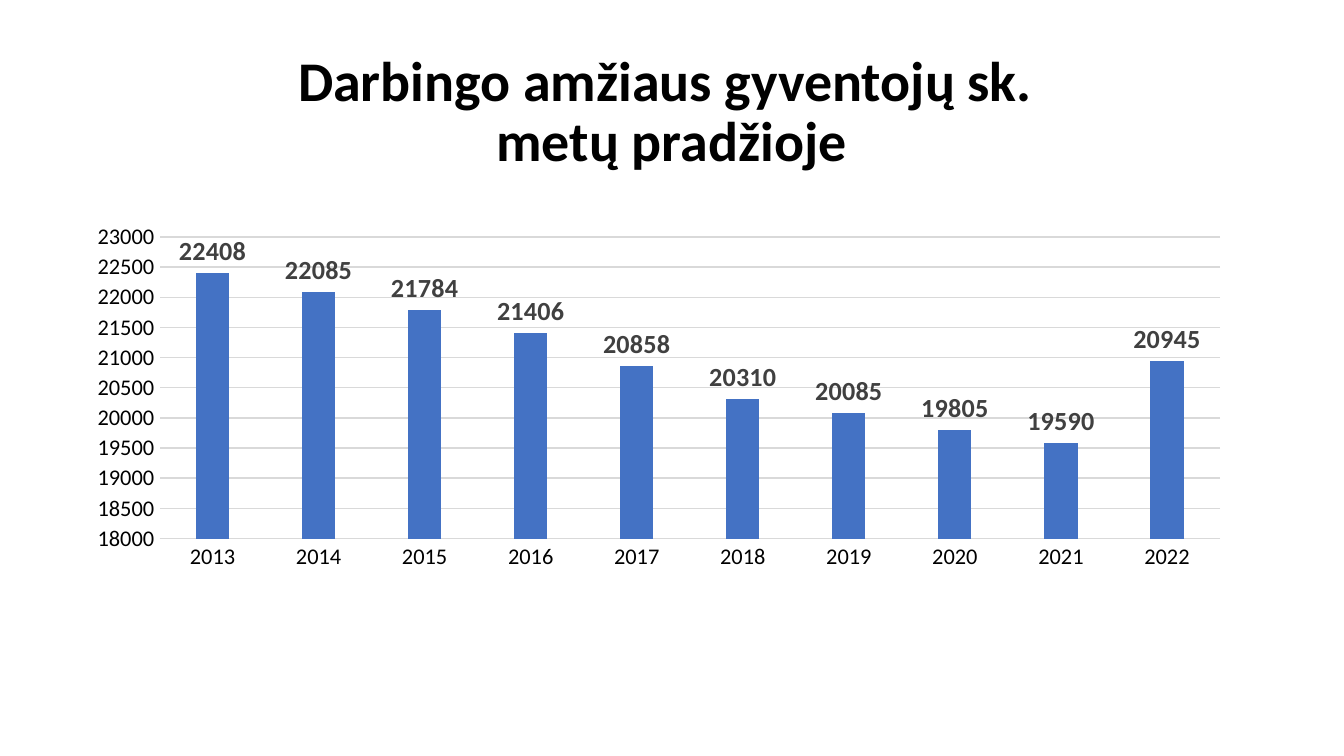
from dataclasses import dataclass
from typing import Any, Optional

import pptx
import pptx.chart.data
import pptx.dml.color
import pptx.enum.chart
import pptx.enum.text
import pptx.util
from pptx.util import Cm

COLORS = {
    "text": "000000",
    "label": "404040",
    "grid": "D9D9D9",
    "bar": "4472C4",
}
FONT = "Calibri"
TITLE_LINES = ("Darbingo amžiaus gyventojų sk. ", "metų pradžioje")
RESIDENTS = (22408, 22085, 21784, 21406, 20858, 20310, 20085, 19805, 19590, 20945)
FIRST_YEAR = 2013


@dataclass(frozen=True)
class TextStyle:
    size: float
    color: str = "text"
    bold: bool = False


@dataclass(frozen=True)
class AxisStyle:
    settings: dict[str, Any]
    line_color: Optional[str] = None


TITLE_STYLE = TextStyle(30, bold=True)
AXIS_TEXT = TextStyle(12)
LABEL_STYLE = TextStyle(14, "label", True)
YEAR_AXIS = AxisStyle({"has_major_gridlines": False}, "grid")
RESIDENT_AXIS = AxisStyle({
    "minimum_scale": 18000,
    "maximum_scale": 23000,
    "major_unit": 500,
    "has_major_gridlines": True,
})


def rgb(name: str) -> pptx.dml.color.RGBColor:
    return pptx.dml.color.RGBColor.from_string(COLORS[name])


def apply_settings(target: Any, settings: dict[str, Any]) -> None:
    for name, value in settings.items():
        setattr(target, name, value)


def style_font(font: Any, style: TextStyle) -> None:
    apply_settings(font, {
        "name": FONT,
        "size": pptx.util.Pt(style.size),
        "bold": style.bold,
    })
    font.color.rgb = rgb(style.color)


def style_line(line: Any, color: Optional[str]) -> None:
    """Draw a thin line, or hide it when no color is given."""
    if color is None:
        line.fill.background()
    else:
        line.color.rgb = rgb(color)
        line.width = pptx.util.Pt(0.75)


def style_axis(axis: Any, style: AxisStyle) -> None:
    apply_settings(axis, {
        "major_tick_mark": pptx.enum.chart.XL_TICK_MARK.NONE,
        "minor_tick_mark": pptx.enum.chart.XL_TICK_MARK.NONE,
        **style.settings,
    })
    style_font(axis.tick_labels.font, AXIS_TEXT)
    style_line(axis.format.line, style.line_color)
    if axis.has_major_gridlines:
        style_line(axis.major_gridlines.format.line, "grid")


def add_title(slide: Any) -> None:
    title = slide.shapes.add_textbox(Cm(1.75), Cm(0.76), Cm(21.89), Cm(2.77)).text_frame
    apply_settings(title, {
        "word_wrap": True,
        "vertical_anchor": pptx.enum.text.MSO_ANCHOR.MIDDLE,
    })
    heading = title.paragraphs[0]
    apply_settings(heading, {
        "text": "\v".join(TITLE_LINES),
        "alignment": pptx.enum.text.PP_ALIGN.CENTER,
        "line_spacing": 0.9,
    })
    for run in heading.runs:
        style_font(run.font, TITLE_STYLE)


def add_resident_chart(slide: Any) -> None:
    residents = pptx.chart.data.CategoryChartData()
    residents.categories = [str(FIRST_YEAR + i) for i in range(len(RESIDENTS))]
    residents.add_series("Series 1", RESIDENTS)
    chart = slide.shapes.add_chart(
        pptx.enum.chart.XL_CHART_TYPE.COLUMN_CLUSTERED,
        Cm(1.4), Cm(4.09), Cm(22.1), Cm(6.83), residents,
    ).chart
    apply_settings(chart, {"has_legend": False, "has_title": False})
    style_font(chart.font, TextStyle(10))
    style_axis(chart.category_axis, YEAR_AXIS)
    style_axis(chart.value_axis, RESIDENT_AXIS)

    columns = chart.plots[0]
    apply_settings(columns, {"gap_width": 219, "overlap": -27, "vary_by_categories": False})
    bars = columns.series[0]
    bars.format.fill.solid()
    bars.format.fill.fore_color.rgb = rgb("bar")
    apply_settings(bars.data_labels, {
        "show_value": True,
        "position": pptx.enum.chart.XL_LABEL_POSITION.OUTSIDE_END,
    })
    style_font(bars.data_labels.font, LABEL_STYLE)


def main() -> None:
    deck = pptx.Presentation()
    apply_settings(deck, {"slide_width": Cm(25.4), "slide_height": Cm(14.29)})
    slide = deck.slides.add_slide(deck.slide_layouts[6])
    add_title(slide)
    add_resident_chart(slide)
    deck.save("out.pptx")


if __name__ == "__main__":
    main()
